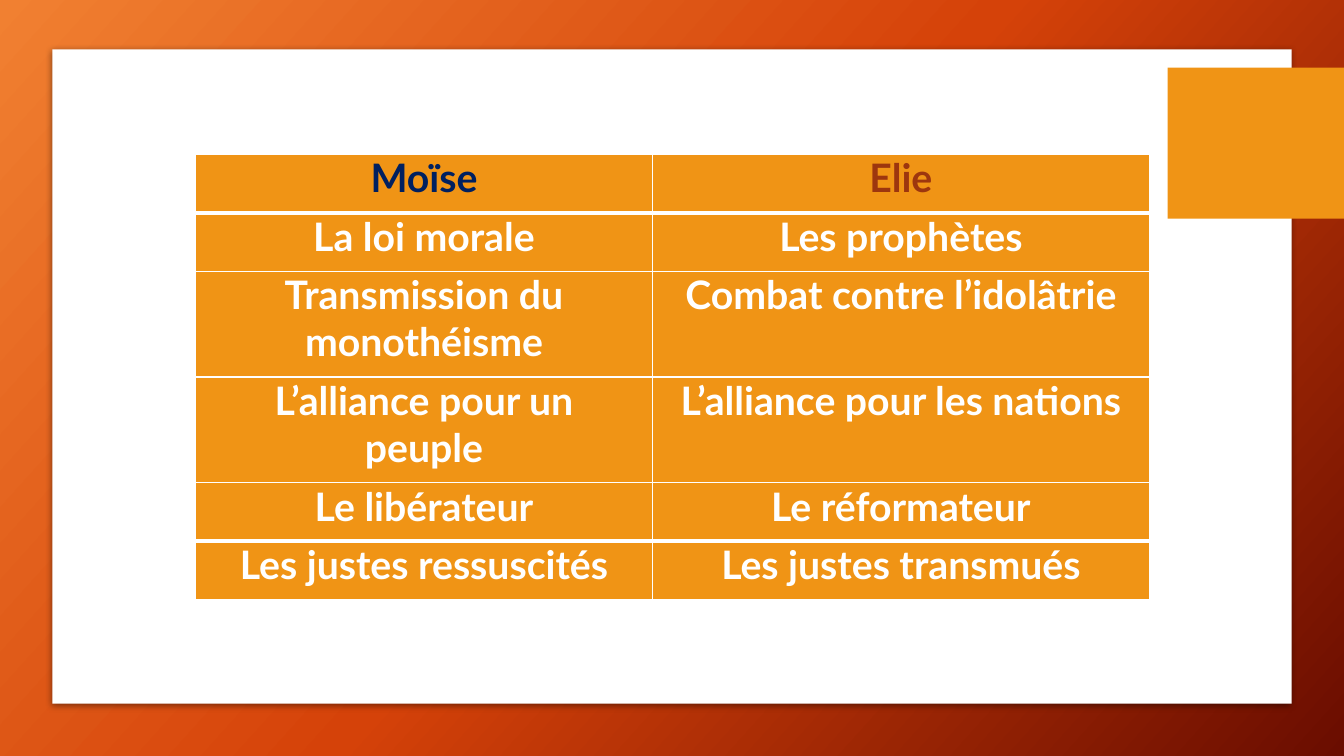
from lxml import etree
from pptx import Presentation
from pptx import util as u
from pptx.dml.color import RGBColor
from pptx.enum import shapes, text
from pptx.oxml.ns import qn

W, H = 13.33, 7.5
WHITE, ORANGE, NAVY, RUST = "FFFFFF", "F09415", "002060", "9D360E"
GRADIENT = [(0, "F18031"), (50, "D54209"), (100, "6A0D00")]
COLS = [4.53, 4.93]
LINE, TWO_LINES = 0.58, 1.05
ROWS = [
    (LINE, "Moïse", "Elie"),
    (LINE, "La loi morale", "Les prophètes"),
    (TWO_LINES, "Transmission du monothéisme", "Combat contre l’idolâtrie"),
    (TWO_LINES, "L’alliance pour un peuple", "L’alliance pour les nations"),
    (LINE, "Le libérateur", "Le réformateur"),
    (LINE, "Les justes ressuscités", "Les justes transmués"),
]
HEADER_COLOURS = [NAVY, RUST]
CELL_FORMAT = {"margin_left": u.Inches(0.2), "margin_right": u.Inches(0.2),
               "margin_top": 0, "margin_bottom": 0}
PARAGRAPH_FORMAT = {"alignment": text.PP_ALIGN.CENTER, "space_after": u.Pt(4)}
FONT_FORMAT = {"name": "Lato", "size": u.Pt(28), "bold": True}


def rgb(value):
    return RGBColor.from_string(value)


def apply(target, values):
    for name, value in values.items():
        setattr(target, name, value)


def sub(parent, tag, **attributes):
    child = etree.SubElement(parent, qn(tag))
    for name, value in attributes.items():
        child.set(name, str(value))
    return child


def solid(target, colour):
    target.fill.solid()
    target.fill.fore_color.rgb = rgb(colour)


def add_background(s):
    fill = s.background.fill
    fill.gradient()
    fill.gradient_angle = 360 - 42
    stops = s.element.find(".//" + qn("a:gsLst"))
    for stop in list(stops):
        stops.remove(stop)
    for percent, colour in GRADIENT:
        sub(sub(stops, "a:gs", pos=percent * 1000), "a:srgbClr", val=colour)


def add_panel(s, left, top, width, height, colour):
    sp = s.shapes.add_shape(shapes.MSO_SHAPE.RECTANGLE,
                            *map(u.Inches, (left, top, width, height)))
    sp.shadow.inherit = False
    solid(sp, colour)
    sp.line.fill.background()
    return sp


def add_shadow(sp, blur, distance, opacity):
    effects = sp.element.spPr.find(qn("a:effectLst"))
    shadow = sub(effects, "a:outerShdw", blurRad=u.Pt(blur), dist=u.Pt(distance),
                 dir=90 * 60000, algn="ctr", rotWithShape=0)
    sub(sub(shadow, "a:srgbClr", val="000000"), "a:alpha", val=opacity * 1000)


def add_borders(cell, top, bottom):
    tcPr = cell._tc.get_or_add_tcPr()
    for side, width in (("L", 1), ("R", 1), ("T", top), ("B", bottom)):
        line = sub(tcPr, "a:ln" + side, w=u.Pt(width))
        sub(sub(line, "a:solidFill"), "a:srgbClr", val=WHITE)


def fill_cell(cell, wording, colour):
    apply(cell, CELL_FORMAT)
    solid(cell, ORANGE)
    p = cell.text_frame.paragraphs[0]
    apply(p, PARAGRAPH_FORMAT)
    r = p.add_run()
    r.text = wording
    apply(r.font, FONT_FORMAT)
    r.font.color.rgb = rgb(colour)


def add_comparison(s, left, top):
    height = sum(row[0] for row in ROWS)
    table = s.shapes.add_table(len(ROWS), len(COLS), *map(
        u.Inches, (left, top, sum(COLS), height))).table
    for column, width in zip(table.columns, COLS):
        column.width = u.Inches(width)
    # The header and the last row are set apart by thicker rules
    last = len(ROWS) - 1
    rules = [1, 3] + [1] * (last - 2) + [3, 1]
    for i, (row_height, *wordings) in enumerate(ROWS):
        table.rows[i].height = u.Inches(row_height)
        for j, wording in enumerate(wordings):
            cell = table.cell(i, j)
            add_borders(cell, rules[i], rules[i + 1])
            fill_cell(cell, wording, WHITE if i else HEADER_COLOURS[j])


def main():
    prs = Presentation()
    prs.slide_width, prs.slide_height = u.Inches(W), u.Inches(H)
    s = prs.slides.add_slide(prs.slide_layouts[6])

    # Backdrop, white page and corner tab
    add_background(s)
    page = add_panel(s, 0.52, 0.49, 12.29, 6.49, WHITE)
    add_shadow(page, blur=5, distance=1.4, opacity=43)
    add_panel(s, W - 1.75, 0.67, 1.75, H / 5, ORANGE)

    # Comparison of the two figures
    add_comparison(s, 1.94, 1.53)
    prs.save("out.pptx")


if __name__ == "__main__":
    main()
